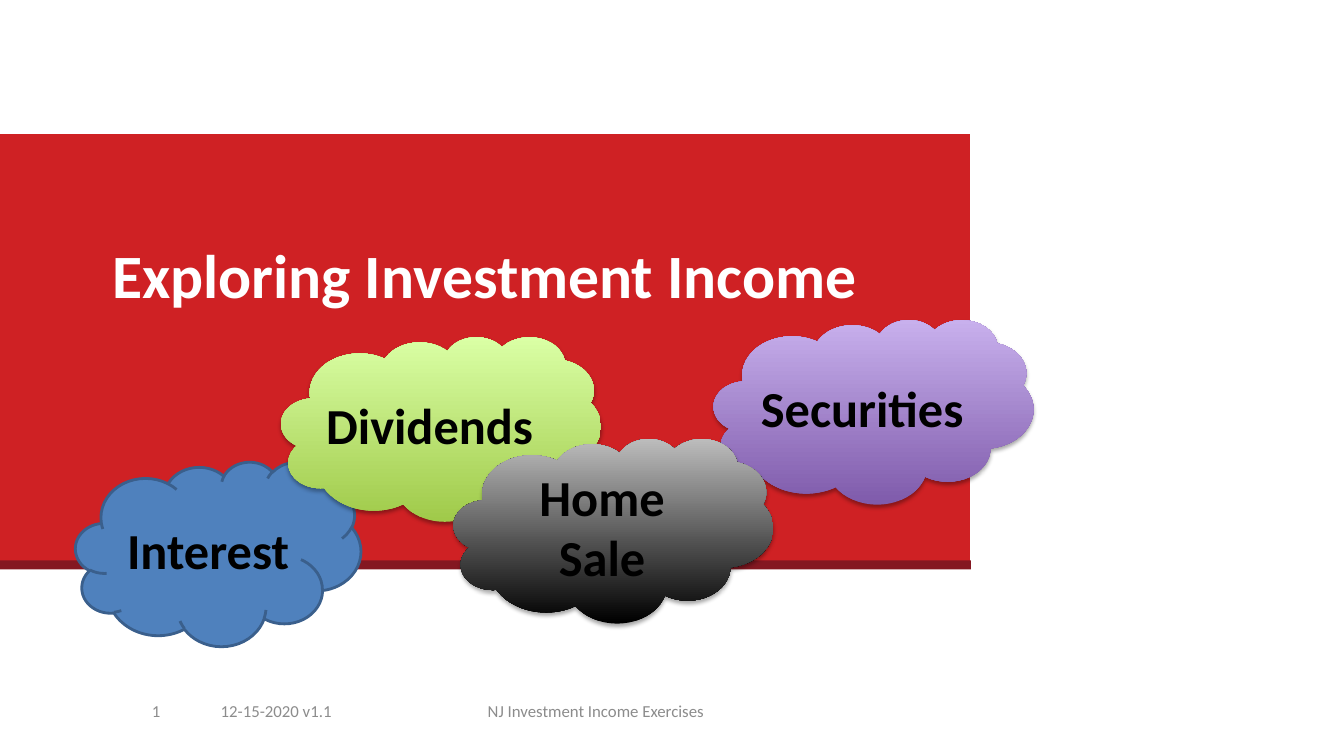
from lxml import etree
from pptx import Presentation
from pptx.dml.color import RGBColor
from pptx.enum import shapes, text
from pptx.oxml.ns import qn
from pptx.util import Inches, Pt

FONT = "Calibri"
ALIGN = text.PP_ALIGN
SHAPE = shapes.MSO_SHAPE


def rgb(value):
    return RGBColor.from_string(value)


def box(left, top, width, height):
    return Inches(left), Inches(top), Inches(width), Inches(height)


def write(tf, words, size, color, align, bold=False):
    tf.word_wrap = True
    tf.vertical_anchor = text.MSO_ANCHOR.MIDDLE
    tf.text = words
    p = tf.paragraphs[0]
    p.alignment = align
    p.font.name = FONT
    p.font.size = Pt(size)
    p.font.bold = bold
    p.font.color.rgb = rgb(color)


def add_title(s, words):
    sp = s.shapes.title
    sp.left, sp.top, sp.width, sp.height = box(1, 2.05, 7.62, 1.33)
    write(sp.text_frame, words, 44, "FFFFFF", ALIGN.CENTER, True)


def add_band(s, top, width, height, color):
    sp = s.shapes.add_shape(SHAPE.RECTANGLE, *box(0, top, width, height))
    sp.shadow.inherit = False
    sp.fill.solid()
    sp.fill.fore_color.rgb = rgb(color)
    sp.line.fill.background()


def add_cloud(s, words, left, top, width):
    sp = s.shapes.add_shape(SHAPE.CLOUD, *box(left, top, width, 1.83))
    sp.shadow.inherit = False
    tf = sp.text_frame
    tf.margin_left = tf.margin_right = 0
    write(tf, words, 36, "000000", ALIGN.CENTER, True)
    return sp


def add_plain_cloud(s, words, left, top, fill, line):
    sp = add_cloud(s, words, left, top, 2.83)
    sp.fill.solid()
    sp.fill.fore_color.rgb = rgb(fill)
    sp.line.color.rgb = rgb(line)
    sp.line.width = Pt(2)


def add_gradient_cloud(s, words, left, top, bottom_color, top_color):
    sp = add_cloud(s, words, left, top, 3.17)
    sp.fill.gradient()
    sp.fill.gradient_angle = 90
    for stop, position, color in zip(sp.fill.gradient_stops, (0, 1), (bottom_color, top_color)):
        stop.position = position
        stop.color.rgb = rgb(color)
    sp.line.fill.background()
    add_shadow(sp)


def add_shadow(sp):
    effects = sp._element.spPr.find(qn("a:effectLst"))
    shadow = etree.SubElement(effects, qn("a:outerShdw"), blurRad=str(Pt(3.1)),
                              dist=str(Pt(1.8)), dir="5400000", rotWithShape="0")
    color = etree.SubElement(shadow, qn("a:srgbClr"), val="000000")
    etree.SubElement(color, qn("a:alpha"), val="35000")


def add_footer(s, words, left, width, align):
    sp = s.shapes.add_textbox(*box(left, 6.85, width, 0.4))
    write(sp.text_frame, words, 12, "8C8C8C", align)


def main():
    prs = Presentation()
    prs.slide_width, prs.slide_height = Inches(13.33), Inches(7.5)
    s = prs.slides.add_slide(prs.slide_layouts[5])

    add_band(s, 1.33, 9.62, 4.27, "CF2124")
    add_band(s, 5.56, 9.63, 0.09, "841721")
    title = s.shapes.title._element
    title.getparent().append(title)
    add_title(s, "Exploring Investment Income")

    add_plain_cloud(s, "Interest", 0.75, 4.58, "4F81BD", "3A5F8C")
    for cloud in (
        ("Dividends", 2.79, 3.34, "A0CA4A", "DAFFA5"),
        ("Securities", 7.08, 3.17, "7F5BAB", "C8B0ED"),
        ("Home Sale", 4.5, 4.35, "000000", "BDBDBD"),
    ):
        add_gradient_cloud(s, *cloud)

    add_footer(s, "12-15-2020 v1.1", 2.09, 1.46, ALIGN.LEFT)
    add_footer(s, "NJ Investment Income Exercises", 3.8, 4.22, ALIGN.CENTER)
    add_footer(s, "1", 0.67, 1.02, ALIGN.RIGHT)

    prs.save("out.pptx")


if __name__ == "__main__":
    main()
